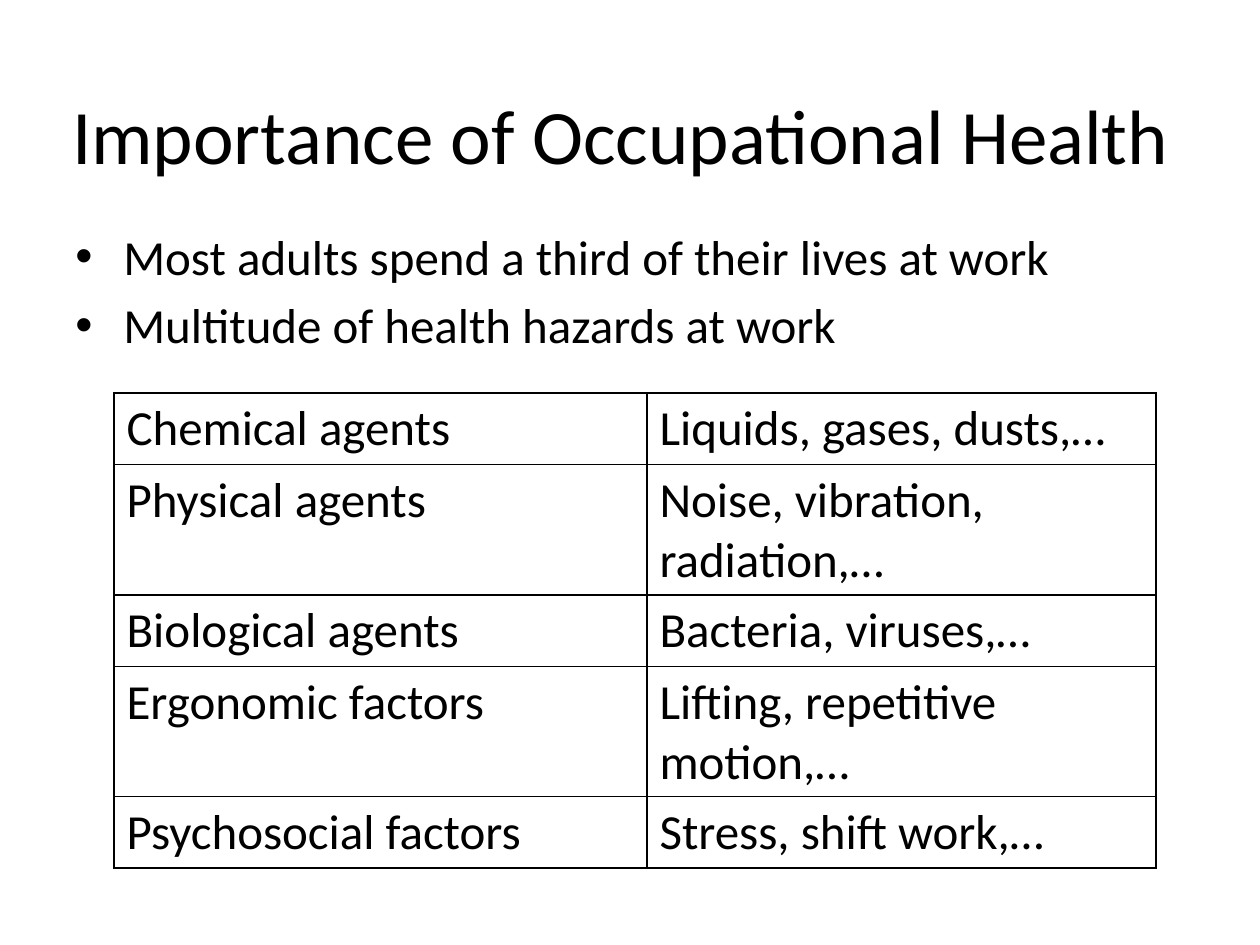
from lxml import etree
from pptx import Presentation
from pptx.dml.color import RGBColor
from pptx.enum.text import MSO_ANCHOR, PP_ALIGN
from pptx.oxml.ns import qn
from pptx.util import Emu, Pt

BLACK = RGBColor(0x00, 0x00, 0x00)
FONT = "Calibri"
TITLE_ONLY = 5
CENTER = PP_ALIGN.CENTER
MIDDLE = MSO_ANCHOR.MIDDLE
BORDER_TAGS = ("a:lnL", "a:lnR", "a:lnT", "a:lnB")

BULLETS = (
    "Most adults spend a third of their lives at work",
    "Multitude of health hazards at work",
)
HAZARDS = (
    ("Chemical agents", "Liquids, gases, dusts,…"),
    ("Physical agents", "Noise, vibration, radiation,…"),
    ("Biological agents", "Bacteria, viruses,…"),
    ("Ergonomic factors", "Lifting, repetitive motion,…"),
    ("Psychosocial factors", "Stress, shift work,…"),
)


def px(length):
    return Emu(round(length * 914400 / 126))


def add_run(paragraph, text, size):
    run = paragraph.add_run()
    run.text = text
    run.font.name = FONT
    run.font.size = Pt(size)
    run.font.color.rgb = BLACK


def place_title(slide, box, text):
    title = slide.shapes.title
    title.left, title.top, title.width, title.height = map(px, box)
    frame = title.text_frame
    frame.word_wrap = True
    frame.vertical_anchor = MIDDLE
    paragraph = frame.paragraphs[0]
    paragraph.alignment = CENTER
    add_run(paragraph, text, 44)


def add_bullets(slide, box, items):
    frame = slide.shapes.add_textbox(*map(px, box)).text_frame
    frame.word_wrap = True
    for index, item in enumerate(items):
        paragraph = frame.add_paragraph() if index else frame.paragraphs[0]
        if index:
            paragraph.space_before = Pt(5.6)
        properties = paragraph._p.get_or_add_pPr()
        properties.set("marL", str(px(48)))
        properties.set("indent", str(px(-48)))
        etree.SubElement(properties, qn("a:buFont"), typeface="Arial")
        etree.SubElement(properties, qn("a:buChar"), char="•")
        add_run(paragraph, item, 28)


def set_borders(cell):
    properties = cell._tc.get_or_add_tcPr()
    for index, tag in enumerate(BORDER_TAGS):
        line = etree.Element(qn(tag), w=str(Pt(1)))
        fill = etree.SubElement(line, qn("a:solidFill"))
        etree.SubElement(fill, qn("a:srgbClr"), val=str(BLACK))
        properties.insert(index, line)


def add_hazard_table(slide, box, column_widths, row_height):
    table = slide.shapes.add_table(
        len(HAZARDS), len(column_widths), *map(px, box)).table
    table.first_row = False
    table.horz_banding = False
    for column, width in zip(table.columns, column_widths):
        column.width = px(width)
    for row, texts in zip(table.rows, HAZARDS):
        row.height = px(row_height)
        for cell, text in zip(row.cells, texts):
            cell.fill.background()
            set_borders(cell)
            add_run(cell.text_frame.paragraphs[0], text, 28)


def build_slide(presentation):
    slide = presentation.slides.add_slide(
        presentation.slide_layouts[TITLE_ONLY])
    place_title(slide, (54, 55, 1134, 158), "Importance of Occupational Health")
    add_bullets(slide, (63, 220, 1134, 624), BULLETS)
    add_hazard_table(slide, (114, 393, 1042, 345), (533, 509), 69)


def main():
    presentation = Presentation()
    presentation.slide_width = px(1260)
    presentation.slide_height = px(945)
    build_slide(presentation)
    presentation.save("out.pptx")


if __name__ == "__main__":
    main()
